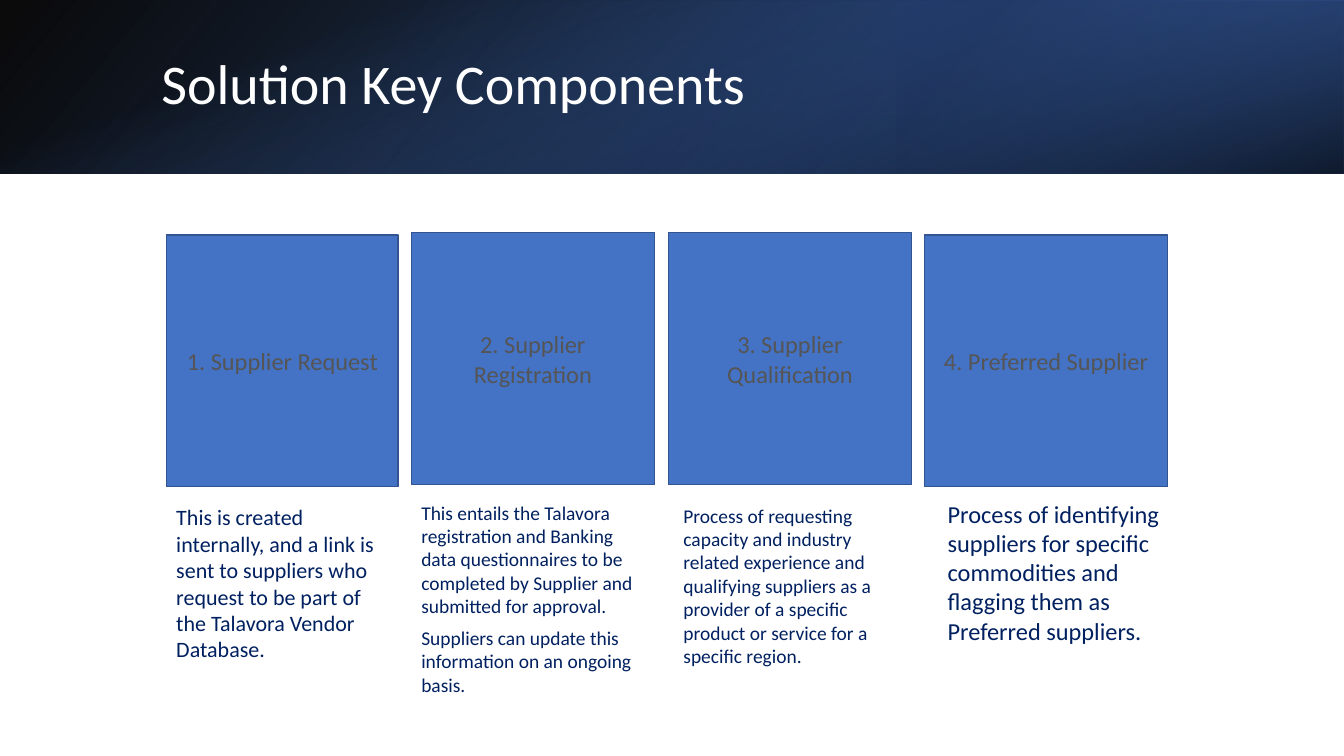
import pptx
import pptx.util
import pptx.dml.color
import pptx.enum.shapes
import pptx.enum.text
import pptx.oxml.ns
import lxml.etree

Inches, Pt = pptx.util.Inches, pptx.util.Pt
ALIGN = pptx.enum.text.PP_ALIGN
ANCHOR = pptx.enum.text.MSO_ANCHOR
AUTO_SIZE = pptx.enum.text.MSO_AUTO_SIZE
RECT = pptx.enum.shapes.MSO_SHAPE.RECTANGLE


def rgb(value):
    return pptx.dml.color.RGBColor.from_string(value)


def write(tf, text, size=18, color="000000", font="Calibri", align=ALIGN.LEFT,
          anchor=ANCHOR.TOP, after=0, spacing=None):
    """Fill a text frame, one paragraph per line of text."""
    tf.word_wrap = True
    tf.vertical_anchor = anchor
    for i, line in enumerate(text.split("\n")):
        p = tf.paragraphs[0] if i == 0 else tf.add_paragraph()
        p.alignment = align
        p.space_after = Pt(after)
        if spacing:
            p.line_spacing = spacing
        r = p.add_run()
        r.text = line
        r.font.name = font
        r.font.size = Pt(size)
        r.font.color.rgb = rgb(color)


class Deck:
    box_fill, box_line, box_text = "4472C4", "325491", "555555"
    body_text, title_text = "002060", "FFFFFF"

    def __init__(self):
        self.prs = pptx.Presentation()
        self.prs.slide_width = Inches(13.33)
        self.prs.slide_height = Inches(7.5)
        self.s = self.prs.slides.add_slide(self.prs.slide_layouts[5])

    def rect(self, x, y, w, h):
        sp = self.s.shapes.add_shape(RECT, Inches(x), Inches(y), Inches(w), Inches(h))
        sp.shadow.inherit = False
        return sp

    def gradient(self, x, y, w, h, stops, angle, rotation=0, flip=False):
        """Draw a borderless band; stops are (position %, colour, opacity %), angle is clockwise."""
        sp = self.rect(x, y, w, h)
        sp.line.fill.background()
        sp.rotation = rotation
        if flip:
            sp._element.spPr.xfrm.set("flipH", "1")
        sp.fill.gradient()
        sp.fill.gradient_angle = 360 - angle
        for stop, (position, color, opacity) in zip(sp.fill.gradient_stops, stops):
            stop.position = position / 100
            stop.color.rgb = rgb(color)
            clr = stop._gs.find(pptx.oxml.ns.qn("a:srgbClr"))
            alpha = lxml.etree.SubElement(clr, pptx.oxml.ns.qn("a:alpha"))
            alpha.set("val", str(opacity * 1000))

    def title(self, text, x, y, w, h):
        sp = self.s.shapes.title
        sp.left, sp.top, sp.width, sp.height = Inches(x), Inches(y), Inches(w), Inches(h)
        sp.text_frame.auto_size = AUTO_SIZE.NONE
        write(sp.text_frame, text, size=40, color=self.title_text,
              anchor=ANCHOR.MIDDLE, spacing=0.9)
        self.s.shapes._spTree.append(sp._element)  # in front of the header bands

    def box(self, text, x, y, w, h):
        sp = self.rect(x, y, w, h)
        sp.fill.solid()
        sp.fill.fore_color.rgb = rgb(self.box_fill)
        sp.line.color.rgb = rgb(self.box_line)
        sp.line.width = Pt(1)
        write(sp.text_frame, text, size=17.4, color=self.box_text,
              align=ALIGN.CENTER, anchor=ANCHOR.MIDDLE, after=6)

    def description(self, text, x, y, w, h, size):
        sp = self.s.shapes.add_textbox(Inches(x), Inches(y), Inches(w), Inches(h))
        write(sp.text_frame, text, size=size, color=self.body_text, after=6)
        sp.text_frame.auto_size = AUTO_SIZE.SHAPE_TO_FIT_TEXT


# heading, box left, box top, width, description left, top, height, size, description
COMPONENTS = [
    ("1. Supplier Request", 1.65, 2.33, 2.3, 1.65, 4.95, 1.68, 15.7,
     "This is created internally, and a link is sent to suppliers who request "
     "to be part of the Talavora Vendor Database."),
    ("2. Supplier Registration", 4.08, 2.31, 2.41, 4.08, 4.92, 2.06, 13.9,
     "This entails the Talavora registration and Banking data questionnaires "
     "to be completed by Supplier and submitted for approval.\n"
     "Suppliers can update this information on an ongoing basis."),
    ("3. Supplier Qualification", 6.63, 2.31, 2.41, 6.68, 4.95, 1.74, 13.9,
     "Process of requesting capacity and industry related experience and "
     "qualifying suppliers as a provider of a specific product or service "
     "for a specific region."),
    ("4. Preferred Supplier", 9.17, 2.33, 2.41, 9.3, 4.9, 1.56, 17.4,
     "Process of identifying suppliers for specific commodities and flagging "
     "them as Preferred suppliers."),
]


def main():
    deck = Deck()
    deck.gradient(0, 0, 13.33, 1.72, [(0, "000000", 96), (100, "2F5597", 100)],
                  140, flip=True)
    deck.gradient(8.89, 0, 4.44, 1.72, [(19, "203864", 68), (100, "4472C4", 79)],
                  320, rotation=180, flip=True)
    deck.gradient(5.8, -5.8, 1.72, 13.33, [(23, "4472C4", 0), (99, "000000", 74)],
                  340, rotation=90)
    deck.title("Solution Key Components", 1.5, 0.38, 10.98, 0.96)
    for heading, x, y, w, text_x, text_y, text_h, size, text in COMPONENTS:
        deck.box(heading, x, y, w, 2.5)
        deck.description(text, text_x, text_y, w, text_h, size)
    deck.prs.save("out.pptx")


if __name__ == "__main__":
    main()
